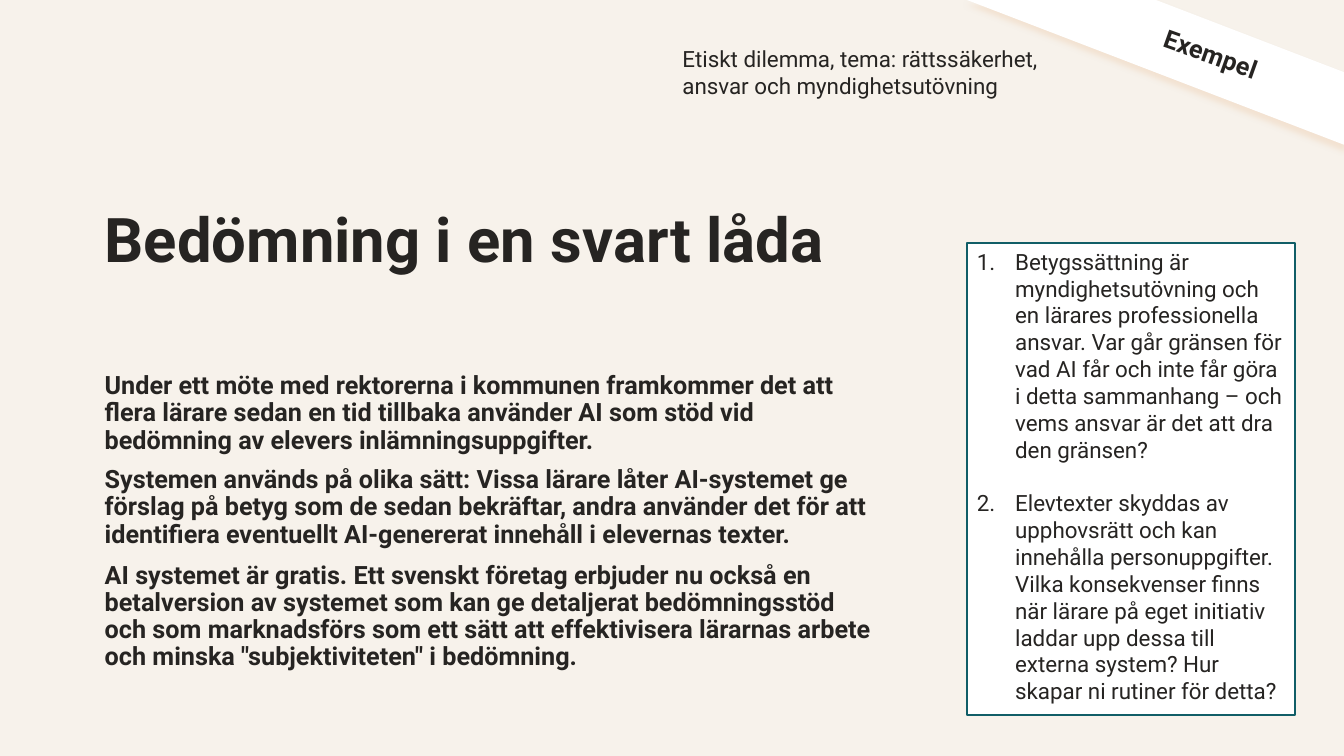
from lxml.etree import SubElement
from pptx import Presentation
from pptx.dml.color import RGBColor
from pptx.enum.shapes import MSO_SHAPE
from pptx.enum.text import MSO_ANCHOR, PP_ALIGN
from pptx.oxml.ns import qn
from pptx.util import Inches, Pt

CREAM = RGBColor(0xF7, 0xF2, 0xEB)
INK = RGBColor(0x26, 0x24, 0x22)
WHITE = RGBColor(0xFF, 0xFF, 0xFF)
TEAL = RGBColor(0x11, 0x5E, 0x67)
SAND = RGBColor(0xF0, 0xD7, 0xBF)

TITLE = "Bedömning i en svart låda"
INTRO = ("Under ett möte med rektorerna i kommunen framkommer det att flera lärare sedan en tid "
         "tillbaka använder AI som stöd vid bedömning av elevers inlämningsuppgifter.")
DETAILS = [
    "Systemen används på olika sätt: Vissa lärare låter AI-systemet ge förslag på betyg som de "
    "sedan bekräftar, andra använder det för att identifiera eventuellt AI-genererat innehåll i "
    "elevernas texter.",
    "AI systemet är gratis. Ett svenskt företag erbjuder nu också en betalversion av systemet som "
    "kan ge detaljerat bedömningsstöd och som marknadsförs som ett sätt att effektivisera lärarnas "
    "arbete och minska \"subjektiviteten\" i bedömning.",
]
TOPIC = "Etiskt dilemma, tema: rättssäkerhet, ansvar och myndighetsutövning"
QUESTIONS = [
    "Betygssättning är myndighetsutövning och en lärares professionella ansvar. Var går gränsen "
    "för vad AI får och inte får göra i detta sammanhang – och vems ansvar är det att dra den "
    "gränsen?",
    "Elevtexter skyddas av upphovsrätt och kan innehålla personuppgifter. Vilka konsekvenser finns "
    "när lärare på eget initiativ laddar upp dessa till externa system? Hur skapar ni rutiner för "
    "detta?",
]


class SlideBuilder:
    BOLD = {"name": "Roboto", "size": Pt(18), "bold": True}
    HEADING = {**BOLD, "size": Pt(44)}
    PLAIN = {"name": "Roboto", "size": Pt(16), "bold": False}

    def __init__(self, prs):
        self.s = prs.slides.add_slide(prs.slide_layouts[6])
        fill = self.s.background.fill
        fill.solid()
        fill.fore_color.rgb = CREAM

    def fill_text(self, sp, texts, style, anchor=MSO_ANCHOR.TOP, spacing=1.0, gap=0,
                  numbered=False):
        tf = sp.text_frame
        tf.word_wrap = True
        tf.vertical_anchor = anchor
        for i, text in enumerate(texts):
            p = tf.add_paragraph() if i else tf.paragraphs[0]
            p.alignment = PP_ALIGN.LEFT
            p.line_spacing = spacing
            p.space_before = Pt(gap if i else 0)
            if numbered:
                self.number(p)
            r = p.add_run()
            r.text = text
            for key, value in style.items():
                setattr(r.font, key, value)
            r.font.color.rgb = INK

    def number(self, p):
        """Give the paragraph an automatic number with a hanging indent."""
        pPr = p._p.get_or_add_pPr()
        indent = Inches(0.38)
        pPr.set("marL", str(indent))
        pPr.set("indent", str(-indent))
        SubElement(pPr, qn("a:buFont"), typeface="+mj-lt")
        SubElement(pPr, qn("a:buAutoNum"), type="arabicPeriod")

    def text(self, box, texts, style, rotation=0, **layout):
        sp = self.s.shapes.add_textbox(*map(Inches, box))
        sp.rotation = rotation
        self.fill_text(sp, texts, style, **layout)

    def panel(self, kind, box):
        sp = self.s.shapes.add_shape(kind, *map(Inches, box))
        sp.shadow.inherit = False
        sp.fill.solid()
        sp.fill.fore_color.rgb = WHITE
        sp.line.fill.background()
        return sp

    def corner_ribbon(self, box):
        sp = self.panel(MSO_SHAPE.DIAGONAL_STRIPE, box)
        spPr = sp._element.spPr
        spPr.find(qn("a:xfrm")).set("flipH", "1")
        shadow = SubElement(spPr.find(qn("a:effectLst")), qn("a:outerShdw"),
                            blurRad=str(Pt(4)), dist=str(Pt(4)), dir="5400000",
                            algn="t", rotWithShape="0")
        color = SubElement(shadow, qn("a:srgbClr"), val=str(SAND))
        SubElement(color, qn("a:alpha"), val="57000")

    def question_box(self, box, questions):
        sp = self.panel(MSO_SHAPE.RECTANGLE, box)
        sp.line.color.rgb = TEAL
        sp.line.width = Pt(1.5)
        self.fill_text(sp, questions, self.PLAIN, gap=19, numbered=True)


def main():
    prs = Presentation()
    prs.slide_width, prs.slide_height = Inches(13.33), Inches(7.5)
    b = SlideBuilder(prs)
    body = {"anchor": MSO_ANCHOR.BOTTOM, "spacing": 0.9, "gap": 10}
    b.text((0.94, 2, 10.14, 0.79), [TITLE], b.HEADING, **body)
    b.text((0.94, 1.23, 7.9, 3.33), [INTRO], b.BOLD, **body)
    b.text((0.94, 4.34, 7.81, 2.37), DETAILS, b.BOLD, **body)
    b.corner_ribbon((9.59, 0, 3.75, 1.44))
    b.text((11.4, 0.56, 2.31, 0.32), ["Exempel"], b.BOLD, rotation=19.6, spacing=0.9)
    b.text((6.67, 0.4, 4.15, 0.64), [TOPIC], b.PLAIN)
    b.question_box((9.59, 2.41, 3.25, 4.68), QUESTIONS)
    prs.save("out.pptx")


if __name__ == "__main__":
    main()
